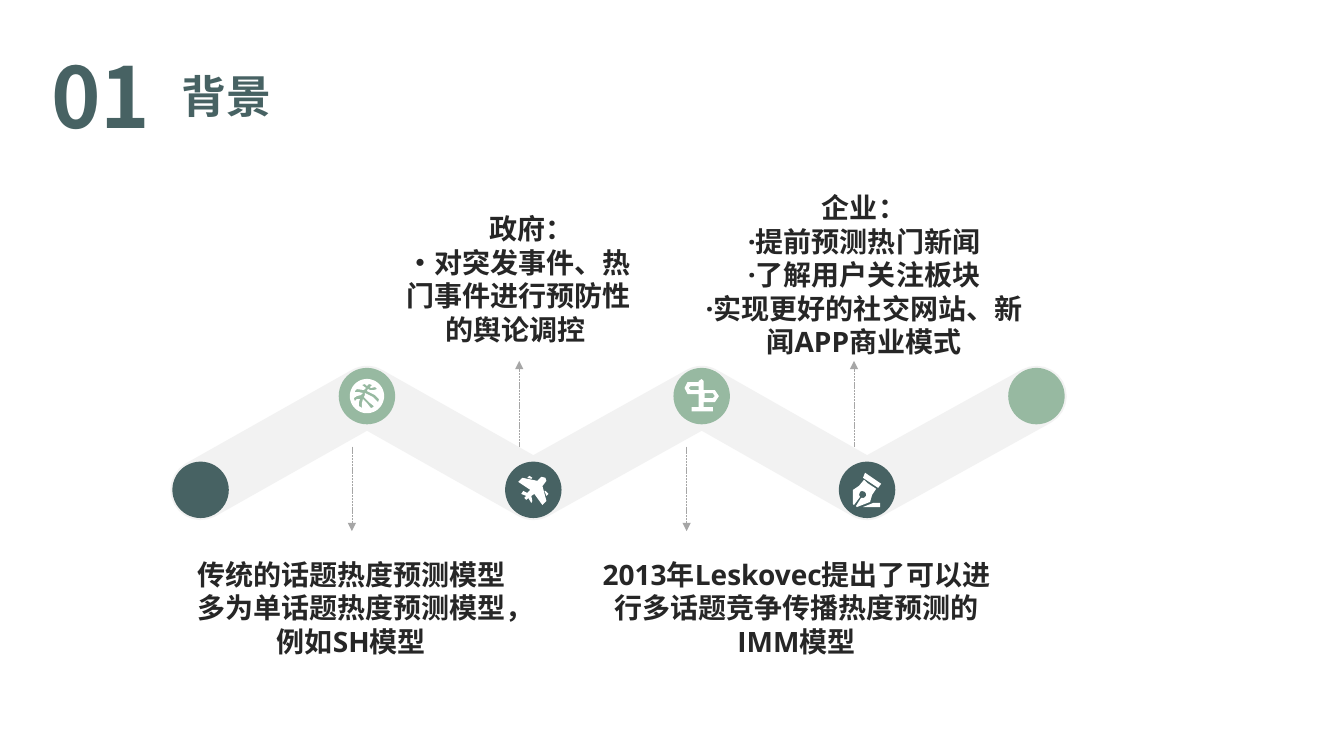
"""Build the background slide: a zigzag path with icons, arrows and captions."""
from math import atan2, cos, radians, sin, pi
from lxml import etree
from pptx import Presentation
from pptx.dml.color import RGBColor
from pptx.enum.dml import MSO_LINE
from pptx.enum.shapes import MSO_CONNECTOR, MSO_SHAPE
from pptx.enum.text import MSO_AUTO_SIZE, PP_ALIGN
from pptx.oxml.ns import qn
from pptx.util import Inches, Pt

OVAL = MSO_SHAPE.OVAL
LINE = MSO_CONNECTOR.STRAIGHT
DASH = MSO_LINE.SQUARE_DOT
GROW = MSO_AUTO_SIZE.SHAPE_TO_FIT_TEXT
LEFT, MID = PP_ALIGN.LEFT, PP_ALIGN.CENTER

THEME = {
    "dark": "476263", "light": "97B9A1", "band": "F2F2F2",
    "icon": "FFFFFF", "arrow": "A6A6A6", "text": "262626",
    "number": 60, "title": 32, "body": 20, "stroke": 0.5,
    "num_font": "Noto Sans CJK JP", "title_font": "Arial",
    "gov_font": "Noto Sans CJK SC", "body_font": "Open Sans",
}

HEADS = [
    ("01", (0.38, 0.39, 1.24, 1.11), "number", "num_font", MID),
    ("背景", (1.7, 0.63, 1.1, 0.64), "title", "title_font", LEFT),
]
NOTES = [
    (["传统的话题热度预测模型多为单话题热度预测模型，例如SH模型"],
     (1.78, 5.48, 3.41, 1.11), "body_font", 0),
    (["政府：", "·对突发事件、热门事件进行预防性的舆论调控 "],
     (3.93, 2.05, 2.43, 1.45), "gov_font", 0.26),
    (["2013年Leskovec提出了可以进行多话题竞争传播热度预测的IMM模型"],
     (5.77, 5.48, 4.26, 1.11), "body_font", 0),
    (["企业：", "·提前预测热门新闻", "·了解用户关注板块",
      "·实现更好的社交网站、新闻APP商业模式"],
     (6.84, 1.84, 3.46, 1.78), "body_font", 0),
]

STOPS = [1.99, 3.64, 5.29, 6.96, 8.6, 10.28]
HIGH, LOW = 3.93, 4.86
DOT, HALF = 0.56, 0.3
GRAIN = 1000
ARROWS = {"first": 3.49, "step": 1.66, "start": 4.43, "down": 5.27, "up": 3.58}


def arc(x, y, size, start, end, steps=12):
    """Return points along an arc, angles in radians, counted upward."""
    turns = [start + (end - start) * i / steps for i in range(steps + 1)]
    return [(x + size * cos(t), y - size * sin(t)) for t in turns]


RUNNER = [
    arc(0, 0, 17, 0, 2 * pi, 48),
    [(-10, -7), (-12, -5), (-12, -4), (-8, -4), (-4, -3), (-6, -1), (-10, 0),
     (-13, 2), (-12, 5), (-10, 3), (-7, 3), (-8, 6), (-8, 10), (-6, 11),
     (-5, 12), (-5, 7), (-4, 3), (0, 7), (4, 12), (6, 11), (7, 10), (2, 6),
     (-3, 1), (-2, -1), (-2, -3), (0, -2), (6, 1), (11, 6), (12, 3), (8, -1),
     (2, -4), (0, -5), (1, -7), (3, -6), (7, -6), (10, -7), (8, -9), (4, -8),
     (3, -9), (5, -11), (2, -12), (0, -10), (-2, -12), (-5, -11), (-1, -8),
     (-3, -6)],
]
PLANE = [
    [(12, -12), (13, -9), (10, -5), (9, -4), (13, 11), (9, 15), (1, 4),
     (-2, 6), (-1, 11), (-2, 13), (-5, 8), (-7, 10), (-9, 8), (-7, 6),
     (-12, 4), (-10, 1), (-6, 3), (-3, 0), (-15, -8), (-11, -12), (4, -9),
     (5, -10), (8, -13)],
    [(15, 4), (12, 1), (11, 1), (13, 6)],
    [(-4, -14), (-6, -12), (-2, -11), (-1, -12)],
]
SIGN = [
    [(2, -6), (13, -6), (17, 0), (13, 6), (2, 6), (2, 11), (11, 11), (11, 15),
     (-10, 15), (-10, 11), (-3, 11), (-3, -2), (-14, -2), (-17, -8),
     (-14, -14), (-3, -14), (-3, -15), (0, -17), (2, -15)],
    [(-3, -10), (-11, -10), (-13, -8), (-11, -6), (-3, -6)],
    [(11, -3), (3, -3), (3, 2), (11, 2), (13, 0)],
]
PEN = [
    [(-13, 15), (-14, 14), (-14, 0), (-8, -4), (-3, -10), (0, -7), (9, -1),
     (5, 5), (3, 12), (-10, 17), (-11, 16), (-6, 8), (-3, 8), (-1, 6),
     (-1, 4), (-2, 2), (-5, 1), (-7, 2), (-8, 5), (-7, 7)],
    [(-4, 17), (13, 17), (13, 13), (6, 13)],
    [(11, -2), (14, -6), (-2, -17), (-4, -12)],
]
ICONS = [None, RUNNER, PLANE, SIGN, PEN, None]


def paint(shape, tint):
    """Fill a shape plainly, with no outline or shadow."""
    shape.shadow.inherit = False
    shape.fill.solid()
    shape.fill.fore_color.rgb = RGBColor.from_string(THEME[tint])
    shape.line.fill.background()


def draw(slide, loops, tint):
    """Draw closed outlines, given in inches, as one freeform."""
    fine = [[(x * GRAIN, y * GRAIN) for x, y in loop] for loop in loops]
    pen = slide.shapes.build_freeform(*fine[0][0], scale=Inches(1) / GRAIN)
    pen.add_line_segments(fine[0][1:], close=True)
    for loop in fine[1:]:
        pen.move_to(*loop[0])
        pen.add_line_segments(loop[1:], close=True)
    paint(pen.convert_to_shape(), tint)


def outline(spots):
    """Return the edge of a band with rounded outer bends."""
    tilt = atan2(LOW - HIGH, (STOPS[-1] - STOPS[0]) / (len(STOPS) - 1))
    inset = HALF / cos(tilt)
    up, down = radians(90), radians(-90)
    (x, y), (end_x, end_y) = spots[0], spots[-1]
    edge = arc(x, y, HALF, radians(270) + tilt, up + tilt)
    for x, y in spots[1:-1]:
        edge += arc(x, y, HALF, up + tilt, up - tilt) if y == HIGH else [(x, y - inset)]
    edge += arc(end_x, end_y, HALF, up + tilt, down + tilt)
    for x, y in spots[-2:0:-1]:
        edge += arc(x, y, HALF, down + tilt, down - tilt) if y == LOW else [(x, y + inset)]
    return edge


def point(slide, x, end):
    """Draw a dashed vertical arrow from the band."""
    arrow = slide.shapes.add_connector(
        LINE, Inches(x), Inches(ARROWS["start"]), Inches(x), Inches(end))
    arrow.line.color.rgb = RGBColor.from_string(THEME["arrow"])
    arrow.line.width = Pt(THEME["stroke"])
    arrow.line.dash_style = DASH
    etree.SubElement(arrow.line._get_or_add_ln(), qn("a:tailEnd"), type="triangle")
    etree.SubElement(arrow._element.spPr, qn("a:effectLst"))


def write(slide, lines, place, size, font, tint, align, wrap, indent=0):
    """Add a bold text box, one paragraph for each line."""
    frame = slide.shapes.add_textbox(*map(Inches, place)).text_frame
    frame.word_wrap = wrap
    frame.auto_size = GROW
    for i, line in enumerate(lines):
        para = frame.add_paragraph() if i else frame.paragraphs[0]
        para.alignment = align
        if indent and not i:
            para._p.get_or_add_pPr().set("marL", str(Inches(indent)))
        run = para.add_run()
        run.text = line
        run.font.size = Pt(THEME[size])
        run.font.name = THEME[font]
        run.font.bold = True
        run.font.color.rgb = RGBColor.from_string(THEME[tint])


def main():
    """Build and save the slide."""
    deck = Presentation()
    deck.slide_width, deck.slide_height = Inches(13.33), Inches(7.5)
    slide = deck.slides.add_slide(deck.slide_layouts[6])
    for text, place, size, font, align in HEADS:
        write(slide, [text], place, size, font, "dark", align, False)
    spots = [(x, HIGH if i % 2 else LOW) for i, x in enumerate(STOPS)]
    draw(slide, [outline(spots)], "band")
    for (x, y), icon in zip(spots, ICONS):
        dot = slide.shapes.add_shape(
            OVAL, Inches(x - DOT / 2), Inches(y - DOT / 2), Inches(DOT), Inches(DOT))
        paint(dot, "light" if y == HIGH else "dark")
        if icon:
            draw(slide, [[(x + a / 100, y + b / 100) for a, b in loop]
                         for loop in icon], "icon")
    for i, (lines, place, font, indent) in enumerate(NOTES):
        point(slide, ARROWS["first"] + i * ARROWS["step"],
              ARROWS["up" if i % 2 else "down"])
        write(slide, lines, place, "body", font, "text", MID, True, indent)
    deck.save("out.pptx")


if __name__ == "__main__":
    main()
